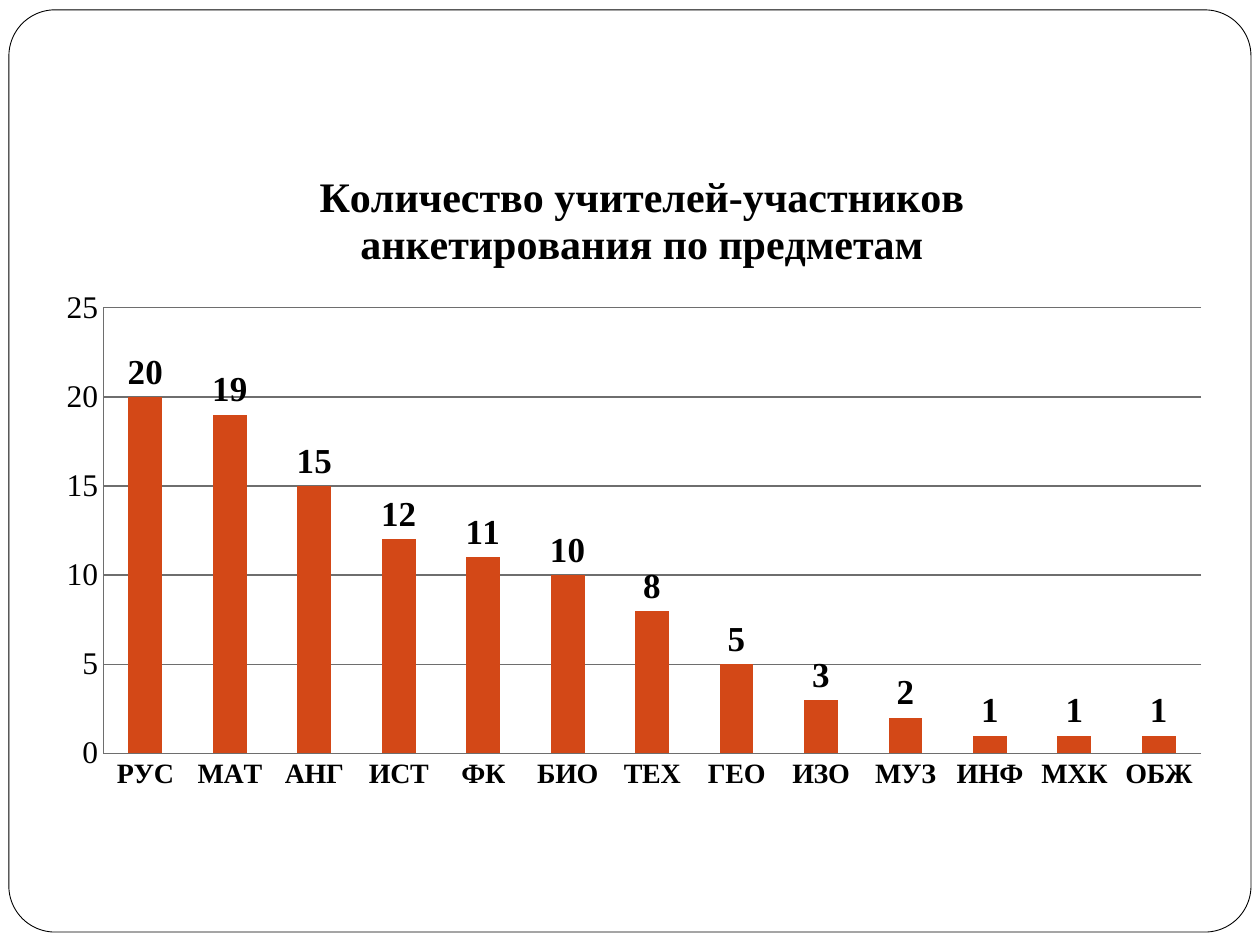
from dataclasses import dataclass

from lxml import etree
from pptx import Presentation, util as u
from pptx.chart import data as chart_data
from pptx.dml import color
from pptx.enum import chart as ch, shapes
from pptx.oxml import ns


@dataclass(frozen=True)
class Theme:
    font: str = "Times New Roman"
    ink: color.RGBColor = color.RGBColor(0x00, 0x00, 0x00)
    paper: color.RGBColor = color.RGBColor(0xFF, 0xFF, 0xFF)
    bar: color.RGBColor = color.RGBColor(0xD3, 0x48, 0x17)
    grid: color.RGBColor = color.RGBColor(0x6E, 0x6E, 0x6E)
    heading: int = 24
    value_label: int = 20
    scale: int = 18
    subject: int = 16


theme = Theme()


def write(frame, content, *, size, bold=False):
    for index, line in enumerate(content.split("\n")):
        paragraph = frame.paragraphs[0] if index == 0 else frame.add_paragraph()
        run = paragraph.add_run()
        run.text = line
        run.font.name = theme.font
        run.font.size = u.Pt(size)
        run.font.bold = bold
        run.font.color.rgb = theme.ink


def place(layout, **settings):
    manual = etree.SubElement(layout, ns.qn("c:manualLayout"))
    for tag, value in settings.items():
        etree.SubElement(manual, ns.qn(f"c:{tag}")).set("val", str(value))


deck = Presentation()
deck.slide_width, deck.slide_height = u.Cm(25.4), u.Cm(19.05)
slide = deck.slides.add_slide(deck.slide_layouts[6])

border = slide.shapes.add_shape(
    shapes.MSO_SHAPE.ROUNDED_RECTANGLE, u.Cm(0.18), u.Cm(0.2), u.Cm(25.04), u.Cm(18.59)
)
border.adjustments[0] = 0.05
border.shadow.inherit = False
border.fill.solid()
border.fill.fore_color.rgb = theme.paper
border.line.color.rgb = theme.ink
border.line.width = u.Pt(0.5)

teachers = {
    "РУС": 20, "МАТ": 19, "АНГ": 15, "ИСТ": 12, "ФК": 11, "БИО": 10, "ТЕХ": 8,
    "ГЕО": 5, "ИЗО": 3, "МУЗ": 2, "ИНФ": 1, "МХК": 1, "ОБЖ": 1,
}
survey = chart_data.CategoryChartData()
survey.categories = list(teachers)
survey.add_series("Series 1", list(teachers.values()))
chart = slide.shapes.add_chart(
    ch.XL_CHART_TYPE.COLUMN_CLUSTERED, u.Cm(0.89), u.Cm(2.72), u.Cm(23.8), u.Cm(13.41), survey
).chart
chart.has_legend = False
chart.font.name = theme.font
chart.font.size = u.Pt(10)
chart.font.color.rgb = theme.ink

chart.has_title = True
heading = chart.chart_title
write(
    heading.text_frame,
    "Количество учителей-участников\nанкетирования по предметам",
    size=theme.heading,
    bold=True,
)
heading.include_in_layout = False

subjects, scale = chart.category_axis, chart.value_axis
for axis, size, bold in ((subjects, theme.subject, True), (scale, theme.scale, False)):
    axis.major_tick_mark = axis.minor_tick_mark = ch.XL_TICK_MARK.NONE
    axis.tick_labels.font.name = theme.font
    axis.tick_labels.font.size = u.Pt(size)
    axis.tick_labels.font.bold = bold
    axis.tick_labels.font.color.rgb = theme.ink
    axis.format.line.color.rgb = theme.grid
    axis.format.line.width = u.Pt(0.75)
scale.minimum_scale, scale.maximum_scale, scale.major_unit = 0, 25, 5
scale.has_major_gridlines = True
scale.major_gridlines.format.line.color.rgb = theme.grid
scale.major_gridlines.format.line.width = u.Pt(0.75)

columns = chart.plots[0]
columns.gap_width = 150
columns.vary_by_categories = False
columns.series[0].format.fill.solid()
columns.series[0].format.fill.fore_color.rgb = theme.bar
counts = columns.series[0].data_labels
counts.show_value = True
counts.position = ch.XL_LABEL_POSITION.OUTSIDE_END
counts.font.name = theme.font
counts.font.size = u.Pt(theme.value_label)
counts.font.bold = True
counts.font.color.rgb = theme.ink

title_xml = heading.text_frame._txBody.getparent().getparent()
plot_xml = title_xml.getparent().find(ns.qn("c:plotArea"))
for parent, position in ((title_xml, 1), (plot_xml, 0)):
    for old in parent.findall(ns.qn("c:layout")):
        parent.remove(old)
    parent.insert(position, etree.Element(ns.qn("c:layout")))
place(title_xml[1], xMode="edge", yMode="edge", x=0.23, y=0.05)
place(
    plot_xml[0], layoutTarget="inner", xMode="edge", yMode="edge",
    x=0.05, y=0.26, w=0.93, h=0.67,
)

deck.save("out.pptx")
